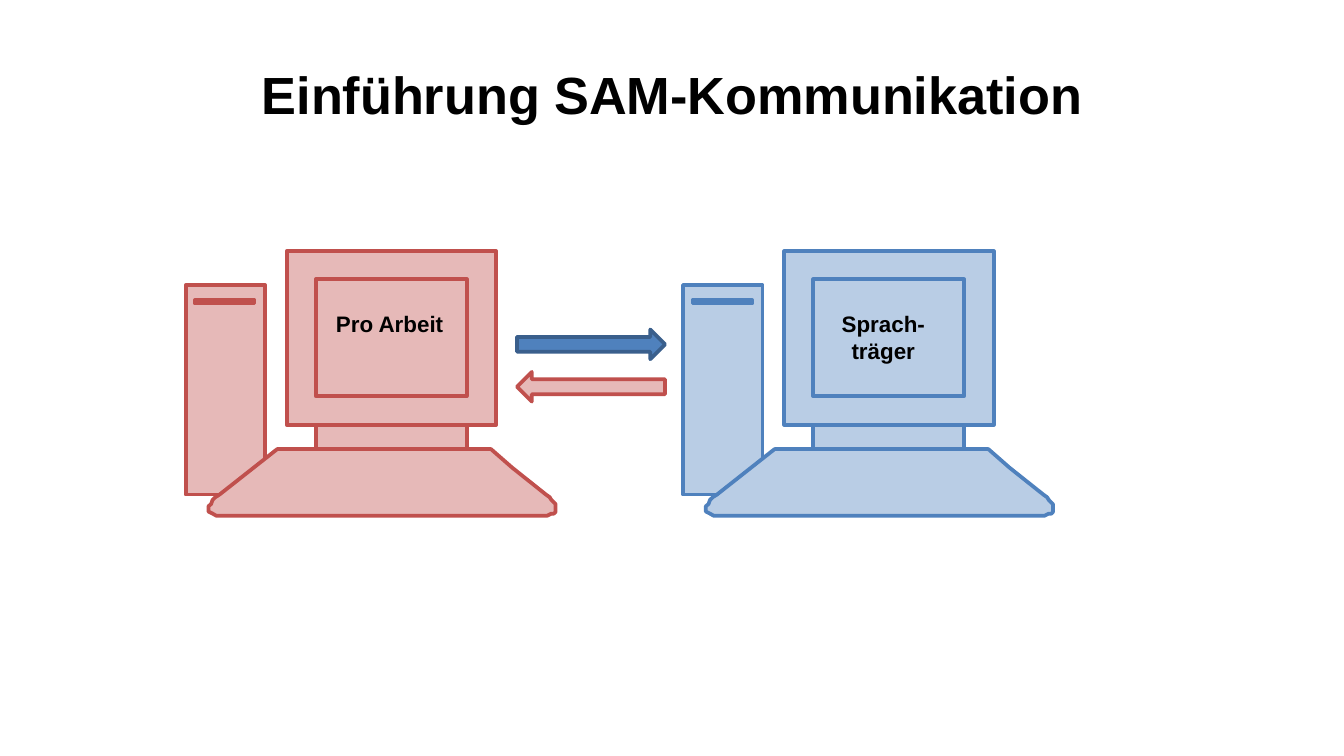
from copy import deepcopy

from pptx import Presentation
from pptx.dml.color import RGBColor
from pptx.enum.shapes import MSO_SHAPE
from pptx.enum.text import MSO_ANCHOR, PP_ALIGN
from pptx.oxml.ns import qn
from pptx.util import Cm, Pt

BLACK = RGBColor(0x00, 0x00, 0x00)
ROSE = RGBColor(0xE6, 0xB9, 0xB8)
RED = RGBColor(0xC0, 0x50, 0x4D)
SKY = RGBColor(0xB9, 0xCD, 0xE5)
BLUE = RGBColor(0x4F, 0x81, 0xBD)
NAVY = RGBColor(0x3A, 0x5F, 0x8C)

TITLE = "Einführung SAM-Kommunikation"
TOP = 4.75
HOSTS = [
    (3.51, ROSE, RED, "Pro Arbeit", (6.1, 2.59, 0.76), PP_ALIGN.LEFT),
    (12.91, SKY, BLUE, "Sprach-träger", (15.5, 2.39, 1.27), PP_ALIGN.CENTER),
]
TOWER = (0, 0.64, 1.5, 3.96)
SLOT = (0.18, 0.92, 1.12, 0.07)
NECK = (2.46, 3.28, 2.85, 0.46)
MONITOR = (1.91, 0, 3.96, 3.28)
SCREEN = (2.46, 0.53, 2.85, 2.21)
KEYS = [
    (1.73, 3.74), (5.77, 3.74), (6.17, 4.09), (6.81, 4.6), (6.88, 4.65),
    (6.91, 4.7), (6.99, 4.78), (6.99, 4.93), (6.96, 4.96), (6.91, 4.96),
    (6.83, 5), (0.58, 5), (0.51, 4.96), (0.43, 4.92), (0.43, 4.82),
    (0.48, 4.78), (0.51, 4.7), (0.56, 4.65), (0.64, 4.6),
]
ARROWS = [(6.23, 0, BLUE, NAVY), (7.03, 180, ROSE, RED)]


def paint(shape, fill, line):
    shape.shadow.inherit = False
    shape.fill.solid()
    shape.fill.fore_color.rgb = fill
    shape.line.color.rgb = line
    shape.line.width = Pt(2)


def write(frame, text, size, align):
    frame.word_wrap = True
    para = frame.paragraphs[0]
    para.alignment = align
    run = para.add_run()
    run.text = text
    run.font.name = "Arial"
    run.font.size = Pt(size)
    run.font.bold = True
    run.font.color.rgb = BLACK


def corners(x, y, wide, high):
    return [(x, y), (x + wide, y), (x + wide, y + high), (x, y + high)]


def split(shape):
    whole = next(shape.element.iter(qn("a:path")))
    blank = deepcopy(whole)
    for step in list(blank):
        blank.remove(step)
    for step in list(whole):
        if step.tag == qn("a:moveTo"):
            piece = deepcopy(blank)
            whole.addprevious(piece)
        piece.append(step)
    whole.getparent().remove(whole)


def draw_host(shapes, left, fill, line):
    parts = [corners(*box) for box in (TOWER, SLOT, NECK, MONITOR, SCREEN)]
    pen = None
    for part in parts + [KEYS]:
        points = [(Cm(left + x), Cm(TOP + y)) for x, y in part]
        if pen is None:
            pen = shapes.build_freeform(*points[0])
        else:
            pen.move_to(*points[0])
        pen.add_line_segments(points[1:], close=True)
    host = pen.convert_to_shape()
    split(host)
    paint(host, fill, line)


def main():
    deck = Presentation()
    deck.slide_width, deck.slide_height = Cm(25.4), Cm(14.29)
    slide = deck.slides.add_slide(deck.slide_layouts[5])
    shapes = slide.shapes

    title = shapes.title
    title.left, title.top = Cm(1.27), Cm(0.58)
    title.width, title.height = Cm(22.86), Cm(2.39)
    title.text_frame.vertical_anchor = MSO_ANCHOR.MIDDLE
    write(title.text_frame, TITLE, 28, PP_ALIGN.CENTER)

    for left, fill, line, name, (x, wide, high), align in HOSTS:
        draw_host(shapes, left, fill, line)
        label = shapes.add_textbox(Cm(x), Cm(5.74), Cm(wide), Cm(high))
        write(label.text_frame, name, 12, align)

    for top, turn, fill, line in ARROWS:
        arrow = shapes.add_shape(MSO_SHAPE.RIGHT_ARROW, Cm(9.77), Cm(top),
                                 Cm(2.8), Cm(0.56))
        arrow.rotation = turn
        paint(arrow, fill, line)

    deck.save("out.pptx")


if __name__ == "__main__":
    main()
